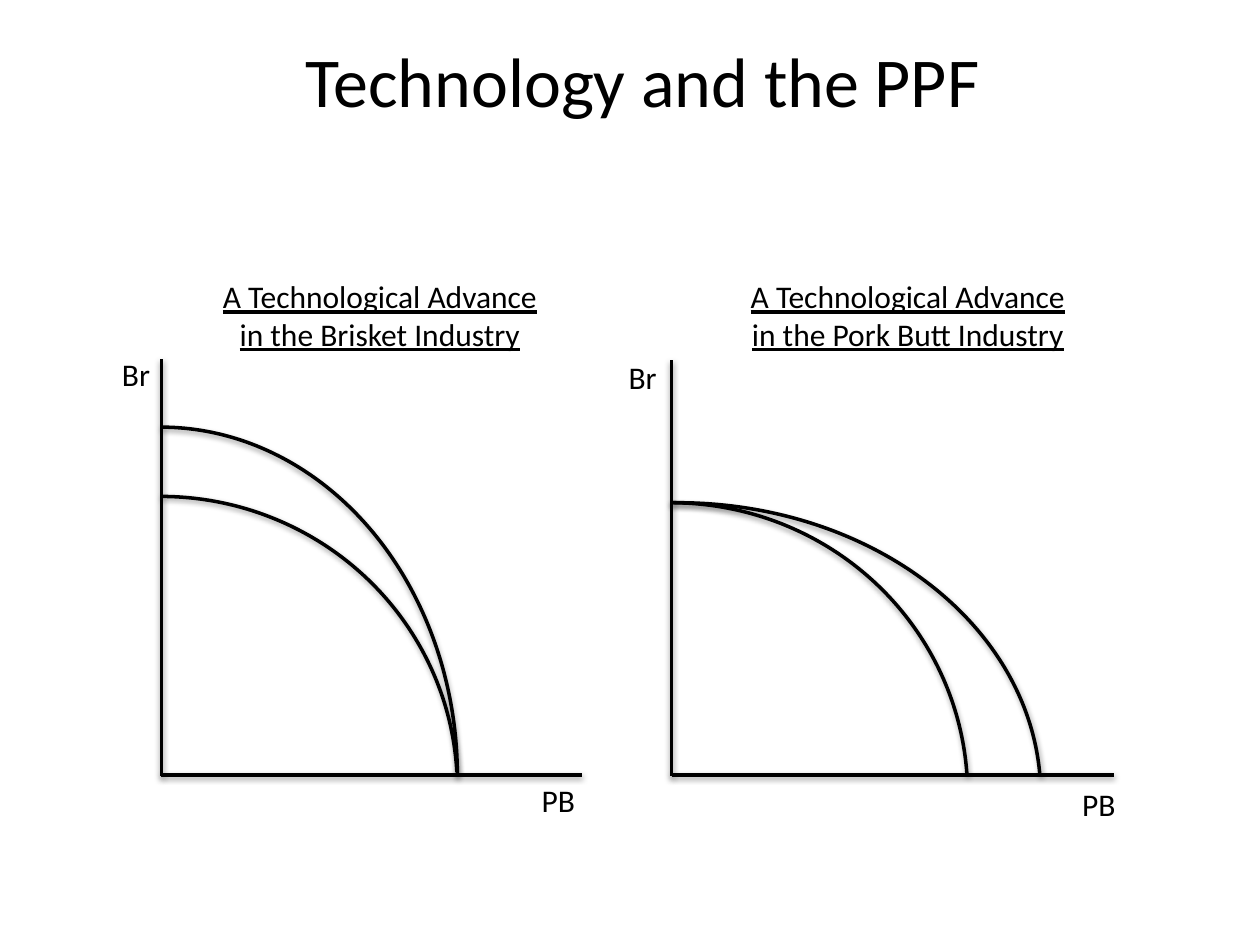
import pptx
import pptx.util
import pptx.dml.color
import pptx.enum.shapes
import pptx.enum.text
import pptx.oxml
import pptx.oxml.ns

SHADOW = (
    '<a:effectLst %s><a:outerShdw blurRad="40000" dist="20000" dir="5400000" '
    'rotWithShape="0"><a:srgbClr val="000000"><a:alpha val="38000"/></a:srgbClr>'
    '</a:outerShdw></a:effectLst>' % pptx.oxml.ns.nsdecls("a")
)


def color(value):
    """Turn a hex string into a colour."""
    return pptx.dml.color.RGBColor.from_string(value)


class Deck:
    """Hold the style and current slide, on a grid of 100 columns by 75 rows."""

    font, ink, weight = "Calibri", "000000", 2
    cols, rows = 100, 75

    def __init__(self):
        """Open a 4:3 presentation with one blank slide."""
        self.prs = pptx.Presentation()
        self.prs.slide_width = pptx.util.Inches(10)
        self.prs.slide_height = pptx.util.Inches(7.5)
        self.s = self.prs.slides.add_slide(self.prs.slide_layouts[6])

    def x(self, col):
        """Convert columns to a length."""
        return round(self.prs.slide_width * col / self.cols)

    def y(self, row):
        """Convert rows to a length."""
        return round(self.prs.slide_height * row / self.rows)

    def stroke(self, sp):
        """Give a line or arc its ink and soft shadow."""
        sp.line.color.rgb = color(self.ink)
        sp.line.width = pptx.util.Pt(self.weight)
        sp_pr = sp._element.spPr
        for old in sp_pr.findall(pptx.oxml.ns.qn("a:effectLst")):
            sp_pr.remove(old)
        sp_pr.append(pptx.oxml.parse_xml(SHADOW))

    def text(self, text, left, top, width, height, size=18, center=True,
             wrap=True, underline=None, middle=False):
        """Add a text box with one run."""
        sp = self.s.shapes.add_textbox(
            self.x(left), self.y(top), self.x(width), self.y(height))
        tf = sp.text_frame
        tf.word_wrap = wrap
        if middle:
            tf.vertical_anchor = pptx.enum.text.MSO_ANCHOR.MIDDLE
        else:
            tf.auto_size = pptx.enum.text.MSO_AUTO_SIZE.SHAPE_TO_FIT_TEXT
        p = tf.paragraphs[0]
        align = pptx.enum.text.PP_ALIGN
        p.alignment = align.CENTER if center else align.LEFT
        r = p.add_run()
        r.text = text
        r.font.name = self.font
        r.font.size = pptx.util.Pt(size)
        r.font.color.rgb = color(self.ink)
        r.font.underline = underline

    def axis(self, x1, y1, x2, y2):
        """Add a straight axis."""
        sp = self.s.shapes.add_connector(
            pptx.enum.shapes.MSO_CONNECTOR.STRAIGHT,
            self.x(x1), self.y(y1), self.x(x2), self.y(y2))
        self.stroke(sp)

    def frontier(self, cx, cy, rx, ry, start=162, end=0):
        """Add a quarter arc around a centre."""
        sp = self.s.shapes.add_shape(
            pptx.enum.shapes.MSO_SHAPE.ARC, self.x(cx - rx), self.y(cy - ry),
            self.x(2 * rx), self.y(2 * ry))
        sp.adjustments[0], sp.adjustments[1] = start, end
        sp.fill.background()
        self.stroke(sp)

    def panel(self, industry, x, top, right, arcs, heading, br, pb):
        """Add one graph with axes, frontiers and labels."""
        base = 61.5
        self.axis(x, top, x, base + 0.1)
        self.axis(x, base, right, base)
        for arc in arcs:
            self.frontier(*arc)
        self.text(f"A Technological Advance in the {industry} Industry",
                  heading, 21.5, 27.7, 7.1, underline=True)
        self.text("Br", *br, 4.3, 4, center=False, wrap=False)
        self.text("PB", *pb, 4.7, 4, center=False, wrap=False)


def main():
    """Build and save the slide."""
    deck = Deck()
    deck.text("Technology and the PPF", 6, 0.1, 90, 12.5, size=40, middle=True)
    deck.panel("Brisket", 12.8, 28.5, 46.2,
               [(12.75, 62.55, 23.55, 23.15, 162, 214.14),
                (12.75, 61.6, 23.55, 27.7)],
               16.3, (8.7, 27.7), (42, 61.5))
    deck.panel("Pork Butt", 53.3, 28.6, 88.4,
               [(53.25, 63.05, 23.55, 23.15, 162, 213.71),
                (53.8, 63.05, 28.8, 23.15, 161.21, 214.14)],
               58.2, (48.9, 27.9), (84.9, 61.8))
    deck.prs.save("out.pptx")


if __name__ == "__main__":
    main()
